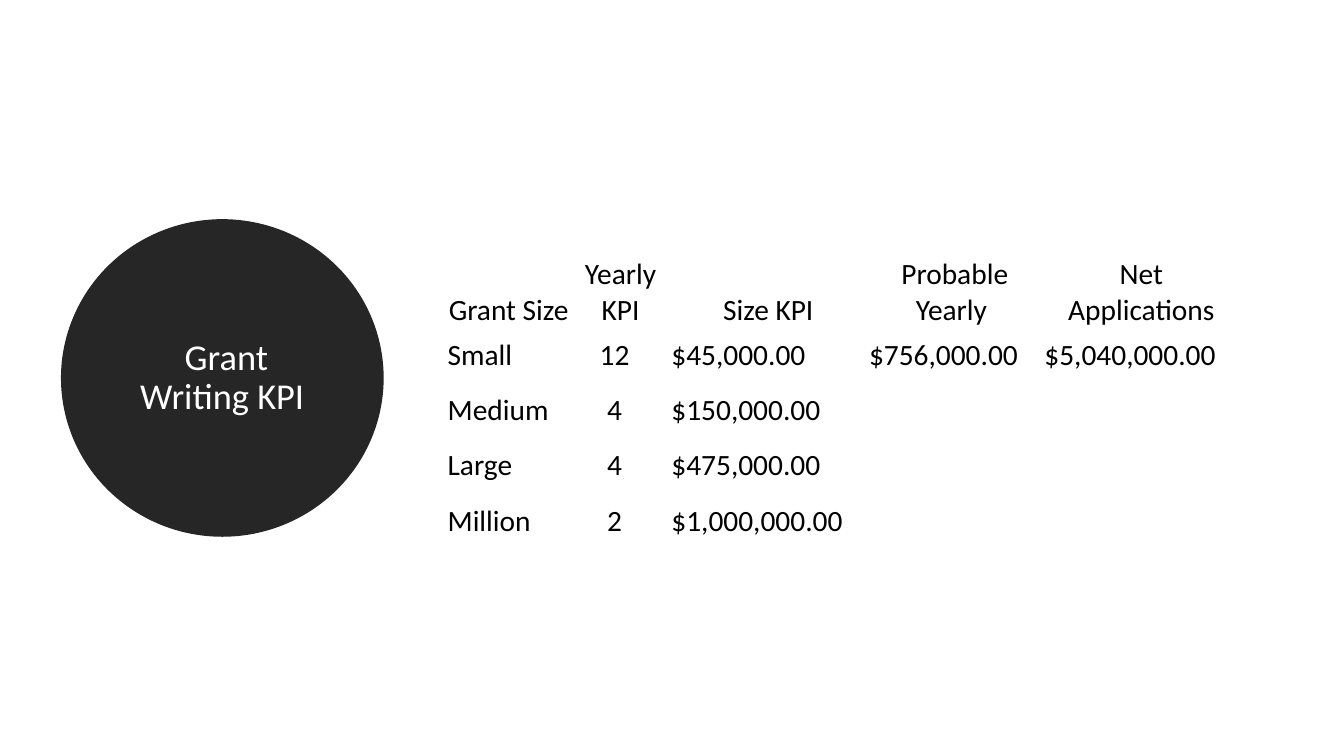
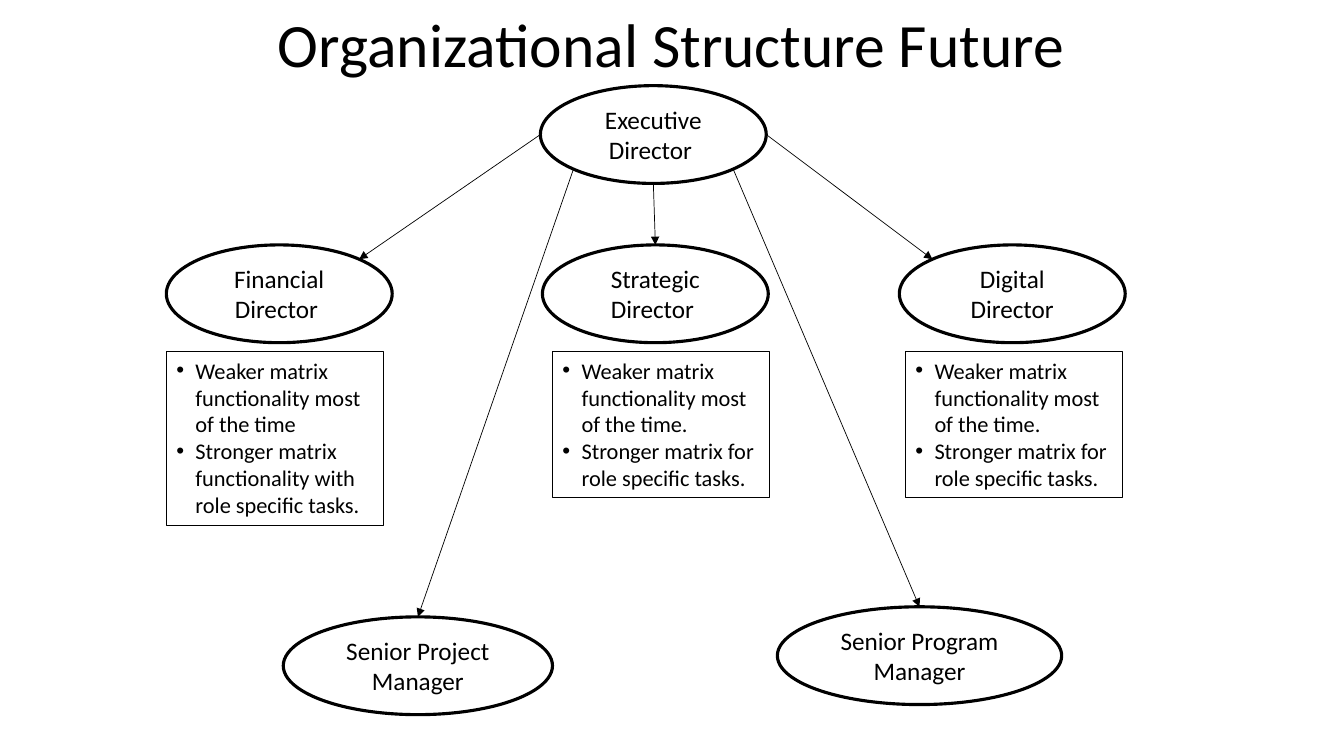
from dataclasses import dataclass
from typing import Optional

from lxml import etree
from pptx import Presentation
from pptx import util as u
from pptx.dml import color
from pptx.enum import shapes, text
from pptx.oxml import ns
from pptx.shapes.autoshape import Shape
from pptx.shapes.connector import Connector
from pptx.slide import Slide
from pptx.text.text import TextFrame


@dataclass(frozen=True)
class Theme:
    font: str = "Calibri"
    ink: color.RGBColor = color.RGBColor(0x00, 0x00, 0x00)
    paper: color.RGBColor = color.RGBColor(0xFF, 0xFF, 0xFF)
    badge: color.RGBColor = color.RGBColor(0x26, 0x26, 0x26)
    title_size: float = 44
    badge_size: float = 26
    table_size: float = 21
    role_size: float = 18
    note_size: float = 16
    badge_line: float = 13.75
    role_line: float = 2.25
    note_line: float = 0.75
    arrow_line: float = 0.5


THEME = Theme()
CENTER = text.PP_ALIGN.CENTER
LEFT = text.PP_ALIGN.LEFT
DIAGONAL = 0.5 ** 0.5


@dataclass(frozen=True)
class Box:
    left: float
    top: float
    width: float
    height: float

    def lengths(self) -> tuple[u.Length, ...]:
        return tuple(u.Inches(v) for v in (self.left, self.top, self.width, self.height))

    def oval_point(self, across: float, down: float) -> tuple[u.Length, u.Length]:
        return (
            u.Inches(self.left + self.width * (1 + across) / 2),
            u.Inches(self.top + self.height * (1 + down) / 2),
        )


@dataclass(frozen=True)
class Role:
    label: str
    box: Box


@dataclass(frozen=True)
class Report:
    role: Role
    leaves: tuple[float, float]
    arrives: tuple[float, float]


@dataclass(frozen=True)
class Note:
    box: Box
    bullets: tuple[str, ...]


ROLE_WIDTH, ROLE_HEIGHT = 2.24, 0.97
DIRECTOR_TOP = 2.43
NOTE_TOP, NOTE_WIDTH = 3.49, 2.15
TOP = (0, -1)

EXECUTIVE = Role("Executive Director ", Box(5.36, 0.85, ROLE_WIDTH, ROLE_HEIGHT))


def director(label: str, left: float) -> Role:
    return Role(label, Box(left, DIRECTOR_TOP, ROLE_WIDTH, ROLE_HEIGHT))


REPORTS = (
    Report(director("Financial Director ", 1.65), (-1, 0), (DIAGONAL, -DIAGONAL)),
    Report(director("Strategic Director ", 5.38), (0, 1), TOP),
    Report(director("Digital Director", 8.92), (1, 0), (-DIAGONAL, -DIAGONAL)),
    Report(
        Role("Senior Project Manager", Box(2.81, 6.12, 2.67, ROLE_HEIGHT)),
        (-DIAGONAL, DIAGONAL),
        TOP,
    ),
    Report(
        Role("Senior Program Manager", Box(7.71, 6.02, 2.82, ROLE_HEIGHT)),
        (DIAGONAL, DIAGONAL),
        TOP,
    ),
)

SHARED_BULLETS = (
    "Weaker matrix functionality most of the time.",
    "Stronger matrix for role specific tasks.",
)
NOTES = (
    Note(
        Box(1.65, NOTE_TOP, NOTE_WIDTH, 1.72),
        (
            "Weaker matrix functionality most of the time",
            "Stronger matrix functionality with role specific tasks.",
        ),
    ),
    Note(Box(5.48, NOTE_TOP, NOTE_WIDTH, 1.45), SHARED_BULLETS),
    Note(Box(8.98, NOTE_TOP, NOTE_WIDTH, 1.45), SHARED_BULLETS),
)

KPI_COLUMN = 1
KPI_WIDTHS = (1.25, 0.97, 1.96, 1.74, 1.96)
KPI_HEIGHTS = (0.79, 0.44, 0.55, 0.55, 0.55)
KPI_ROWS = (
    ("Grant Size", "Yearly KPI", "Size KPI", "Probable Yearly ", "Net Applications"),
    ("Small", "12", "$45,000.00", "$756,000.00", "$5,040,000.00"),
    ("Medium", "4", "$150,000.00", "", ""),
    ("Large", "4", "$475,000.00", "", ""),
    ("Million", "2", "$1,000,000.00", "", ""),
)


def write(
    frame: TextFrame,
    content: str,
    size: float,
    ink: color.RGBColor = THEME.ink,
    alignment: text.PP_ALIGN = CENTER,
) -> None:
    frame.text = content
    for paragraph in frame.paragraphs:
        paragraph.alignment = alignment
        paragraph.font.size = u.Pt(size)
        for run in paragraph.runs:
            run.font.name = THEME.font
            run.font.size = u.Pt(size)
            run.font.color.rgb = ink


def add_panel(
    slide: Slide,
    kind: shapes.MSO_SHAPE,
    box: Box,
    fill: Optional[color.RGBColor],
    line: color.RGBColor,
    line_width: float,
) -> Shape:
    shape = slide.shapes.add_shape(kind, *box.lengths())
    shape.shadow.inherit = False
    if fill is None:
        shape.fill.background()
    else:
        shape.fill.solid()
        shape.fill.fore_color.rgb = fill
    shape.line.color.rgb = line
    shape.line.width = u.Pt(line_width)
    shape.text_frame.word_wrap = True
    return shape


def add_role(slide: Slide, role: Role) -> Shape:
    shape = add_panel(
        slide, shapes.MSO_SHAPE.OVAL, role.box, THEME.paper, THEME.ink, THEME.role_line
    )
    shape.text_frame.vertical_anchor = text.MSO_ANCHOR.MIDDLE
    write(shape.text_frame, role.label, THEME.role_size)
    return shape


def add_note(slide: Slide, note: Note) -> None:
    shape = add_panel(
        slide, shapes.MSO_SHAPE.RECTANGLE, note.box, None, THEME.ink, THEME.note_line
    )
    frame = shape.text_frame
    frame.vertical_anchor = text.MSO_ANCHOR.TOP
    frame.auto_size = text.MSO_AUTO_SIZE.SHAPE_TO_FIT_TEXT
    write(frame, "\n".join(note.bullets), THEME.note_size, alignment=LEFT)
    indent = u.Inches(0.19)
    for paragraph in frame.paragraphs:
        properties = paragraph._p.get_or_add_pPr()
        properties.set("marL", str(indent))
        properties.set("indent", str(-indent))
        etree.SubElement(properties, ns.qn("a:buFont")).set("typeface", "Arial")
        etree.SubElement(properties, ns.qn("a:buChar")).set("char", "•")


def add_arrow(slide: Slide, report: Report, target: Shape) -> Connector:
    connector = slide.shapes.add_connector(
        shapes.MSO_CONNECTOR.STRAIGHT,
        *EXECUTIVE.box.oval_point(*report.leaves),
        *report.role.box.oval_point(*report.arrives),
    )
    if report.arrives == TOP:
        connector.end_connect(target, 0)
    connector.line.color.rgb = THEME.ink
    connector.line.width = u.Pt(THEME.arrow_line)
    line = connector.line._get_or_add_ln()
    etree.SubElement(line, ns.qn("a:tailEnd")).set("type", "triangle")
    etree.SubElement(connector._element.spPr, ns.qn("a:effectLst"))
    return connector


def add_kpi_table(slide: Slide) -> None:
    box = Box(4.42, 2.47, sum(KPI_WIDTHS), sum(KPI_HEIGHTS))
    table = slide.shapes.add_table(
        len(KPI_ROWS), len(KPI_WIDTHS), *box.lengths()
    ).table
    table.first_row = False
    table.horz_banding = False
    for column, width in zip(table.columns, KPI_WIDTHS):
        column.width = u.Inches(width)
    for row, height in zip(table.rows, KPI_HEIGHTS):
        row.height = u.Inches(height)
    for row_index, values in enumerate(KPI_ROWS):
        for column_index, value in enumerate(values):
            is_header = row_index == 0
            is_count = column_index == KPI_COLUMN and not is_header
            cell = table.cell(row_index, column_index)
            cell.fill.background()
            cell.vertical_anchor = text.MSO_ANCHOR.BOTTOM
            cell.margin_left = cell.margin_top = u.Inches(0.02)
            cell.margin_right = u.Inches(0.14 if is_count else 0.02)
            cell.margin_bottom = u.Inches(0)
            alignment = CENTER if is_header or is_count else LEFT
            write(cell.text_frame, value, THEME.table_size, alignment=alignment)


def build_kpi_slide(slide: Slide) -> None:
    badge = add_panel(
        slide,
        shapes.MSO_SHAPE.OVAL,
        Box(0.7, 2.27, 3.01, 2.96),
        THEME.badge,
        THEME.badge,
        THEME.badge_line,
    )
    badge.text_frame.vertical_anchor = text.MSO_ANCHOR.MIDDLE
    write(badge.text_frame, " Grant Writing KPI", THEME.badge_size, THEME.paper)
    paragraph = badge.text_frame.paragraphs[0]
    paragraph.line_spacing = 0.9
    paragraph.space_after = u.Pt(6)
    add_kpi_table(slide)


def build_structure_slide(slide: Slide) -> None:
    title = slide.shapes.add_textbox(*Box(0, 0.01, 13.32, 0.84).lengths())
    title.text_frame.word_wrap = True
    title.text_frame.auto_size = text.MSO_AUTO_SIZE.SHAPE_TO_FIT_TEXT
    write(title.text_frame, "Organizational Structure Future", THEME.title_size)
    add_role(slide, EXECUTIVE)
    for report in REPORTS:
        add_arrow(slide, report, add_role(slide, report.role))
    for note in NOTES:
        add_note(slide, note)


def main() -> None:
    presentation = Presentation()
    presentation.slide_width = u.Inches(13.33)
    presentation.slide_height = u.Inches(7.5)
    blank = presentation.slide_layouts[6]
    for build in (build_kpi_slide, build_structure_slide):
        build(presentation.slides.add_slide(blank))
    presentation.save("out.pptx")


if __name__ == "__main__":
    main()
